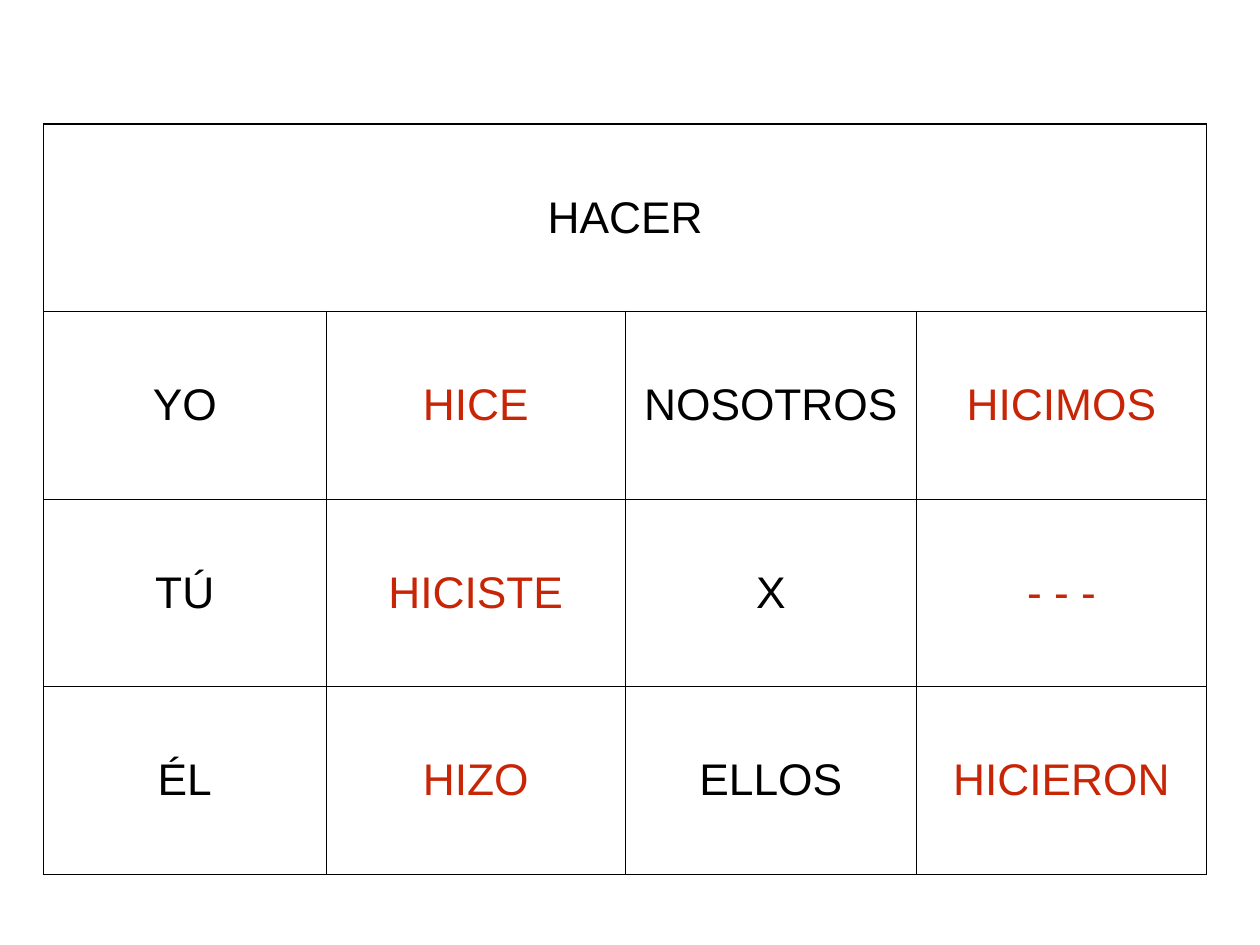
from dataclasses import dataclass

from lxml import etree
from pptx import Presentation
from pptx.dml.color import RGBColor
from pptx.enum.text import MSO_ANCHOR, PP_ALIGN
from pptx.oxml.ns import qn
from pptx.table import Table, _Cell
from pptx.util import Inches, Pt

CENTER = PP_ALIGN.CENTER
MIDDLE = MSO_ANCHOR.MIDDLE

BLACK = RGBColor(0x00, 0x00, 0x00)
RED = RGBColor(0xC8, 0x25, 0x06)

FONT = "Arial"
TEXT_SIZE = Pt(36)
BORDER_WIDTH = Pt(1)
CELL_MARGIN = Inches(0.06)

TABLE_LEFT, TABLE_TOP = Inches(0.49), Inches(1.4)
TABLE_HEIGHT = Inches(8.47)
COLUMN_WIDTHS = [Inches(width) for width in (3.19, 3.38, 3.28, 3.28)]

VERB = "HACER"


@dataclass(frozen=True)
class Conjugation:
    pronoun: str
    form: str


CONJUGATIONS = [
    [Conjugation("YO", "HICE"), Conjugation("NOSOTROS", "HICIMOS")],
    [Conjugation("TÚ", "HICISTE"), Conjugation("X", "- - -")],
    [Conjugation("ÉL", "HIZO"), Conjugation("ELLOS", "HICIERON")],
]


def draw_borders(cell: _Cell) -> None:
    properties = cell._tc.get_or_add_tcPr()
    for position, side in enumerate(("lnL", "lnR", "lnT", "lnB")):
        border = etree.Element(qn(f"a:{side}"), w=str(BORDER_WIDTH))
        fill = etree.SubElement(border, qn("a:solidFill"))
        etree.SubElement(fill, qn("a:srgbClr"), val=str(BLACK))
        properties.insert(position, border)


def write_cell(cell: _Cell, text: str, color: RGBColor) -> None:
    cell.vertical_anchor = MIDDLE
    cell.margin_left = cell.margin_right = CELL_MARGIN
    cell.margin_top = cell.margin_bottom = CELL_MARGIN
    paragraph = cell.text_frame.paragraphs[0]
    paragraph.alignment = CENTER
    run = paragraph.add_run()
    run.text = text
    run.font.name = FONT
    run.font.size = TEXT_SIZE
    run.font.color.rgb = color


def fill_conjugations(table: Table) -> None:
    for row, conjugations in enumerate(CONJUGATIONS, start=1):
        for pair, conjugation in enumerate(conjugations):
            write_cell(table.cell(row, 2 * pair), conjugation.pronoun, BLACK)
            write_cell(table.cell(row, 2 * pair + 1), conjugation.form, RED)


def add_verb_table(slide) -> None:
    table = slide.shapes.add_table(
        len(CONJUGATIONS) + 1, len(COLUMN_WIDTHS),
        TABLE_LEFT, TABLE_TOP, sum(COLUMN_WIDTHS), TABLE_HEIGHT,
    ).table
    table.first_row = table.horz_banding = False
    for column, width in zip(table.columns, COLUMN_WIDTHS):
        column.width = width
    for cell in table.iter_cells():
        cell.fill.background()
        draw_borders(cell)

    verb_cell = table.cell(0, 0)
    verb_cell.merge(table.cell(0, len(COLUMN_WIDTHS) - 1))
    write_cell(verb_cell, VERB, BLACK)
    fill_conjugations(table)


def main() -> None:
    presentation = Presentation()
    presentation.slide_width = Inches(14.22)
    presentation.slide_height = Inches(10.67)
    blank_layout = presentation.slide_layouts[6]
    add_verb_table(presentation.slides.add_slide(blank_layout))
    presentation.save("out.pptx")


if __name__ == "__main__":
    main()
